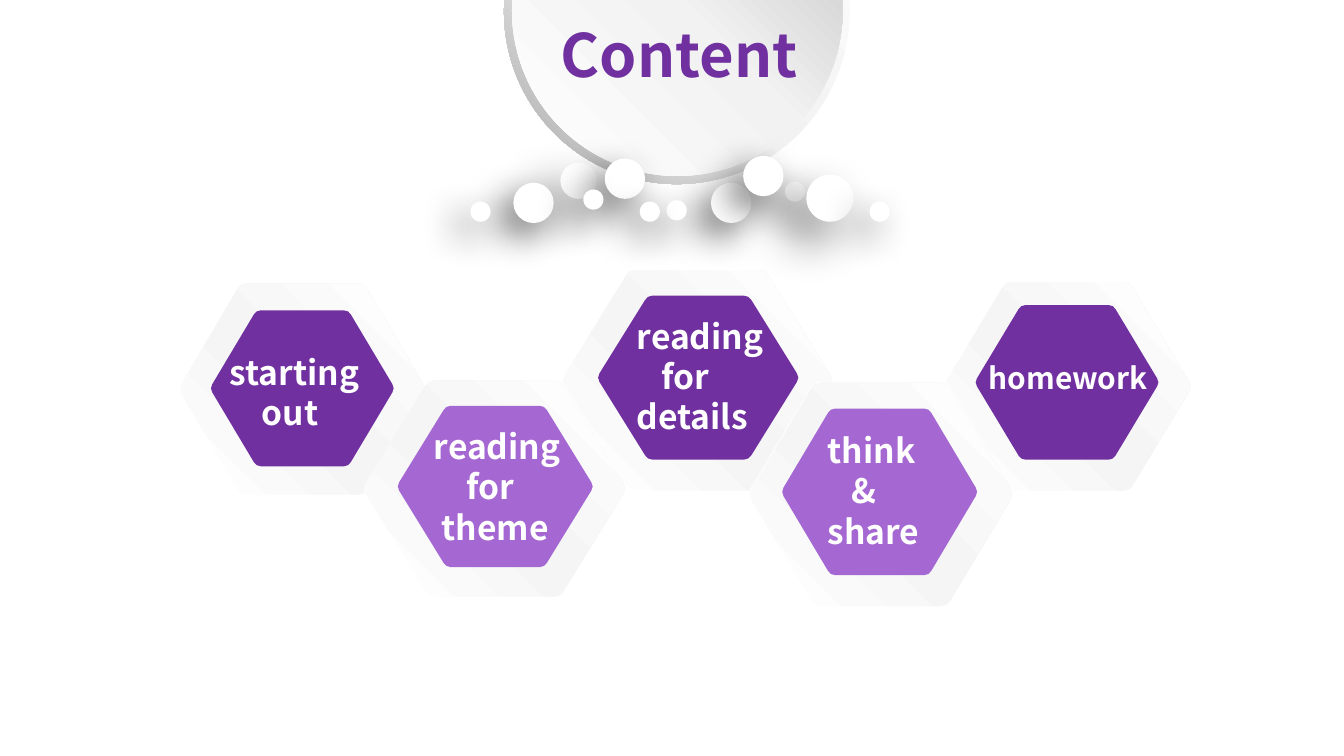
from dataclasses import dataclass

from lxml import etree
from pptx import Presentation
from pptx.dml.color import RGBColor
from pptx.enum.shapes import MSO_SHAPE
from pptx.enum.text import MSO_ANCHOR
from pptx.oxml.ns import qn
from pptx.shapes.autoshape import Shape
from pptx.text.text import TextFrame
from pptx.util import Inches, Pt

OVAL = MSO_SHAPE.OVAL
DONUT = MSO_SHAPE.DONUT
TOP = MSO_ANCHOR.TOP

FONT = "Noto Sans CJK SC"
BLACK = RGBColor(0x00, 0x00, 0x00)
WHITE = RGBColor(0xFF, 0xFF, 0xFF)
PALE = RGBColor(0xF5, 0xF5, 0xF5)
LIGHT = RGBColor(0xF2, 0xF2, 0xF2)
SILVER = RGBColor(0xBF, 0xBF, 0xBF)
GREY = RGBColor(0xA6, 0xA6, 0xA6)
PURPLE = RGBColor(0x70, 0x30, 0xA0)
LILAC = RGBColor(0xA5, 0x68, 0xD2)

STEP = 0.06
QUARTER = [(0.5, 0), (0.493, 0.026), (0.265, 0.474), (0.25, 0.493), (0.228, 0.5)]


@dataclass
class Box:
    left: float
    top: float
    width: float
    height: float

    def lengths(self) -> list[int]:
        return [Inches(v) for v in (self.left, self.top, self.width, self.height)]


@dataclass
class Blend:
    stops: list[tuple[int, RGBColor]]
    angle: int


@dataclass
class Ball:
    left: float
    top: float
    size: float
    alpha: int = 60
    blur: int = 20
    reach: int = 10


@dataclass
class Line:
    text: str
    indent: int = 0


@dataclass
class Topic:
    back: Box
    rim: Box
    core: Box
    color: RGBColor
    label: Box
    lines: list[Line]
    size: int = 18


RING = Blend([(0, WHITE), (55, LIGHT), (100, GREY)], 135)
DISC = Blend([(0, WHITE), (51, LIGHT), (100, SILVER)], 315)
RIM = Blend([(0, WHITE), (47, PALE), (100, WHITE)], 315)

BALLS = [
    Ball(5.29, 1.36, 0.3),
    Ball(4.96, 1.49, 0.15),
    Ball(5.84, 1.35, 0.15),
    Ball(4.17, 1.21, 0.27, 50, 25, 15),
    Ball(4.5, 1.18, 0.3),
    Ball(4.76, 1.5, 0.15),
    Ball(6, 1.3, 0.35, 50, 25, 15),
    Ball(3.82, 1.36, 0.3),
    Ball(3.5, 1.5, 0.15),
    Ball(5.53, 1.16, 0.3),
    Ball(4.34, 1.41, 0.15),
    Ball(6.47, 1.5, 0.15),
]

TOPICS = [
    Topic(Box(7.02, 2.09, 1.84, 1.56), Box(7.03, 2.1, 1.83, 1.55),
          Box(7.26, 2.27, 1.36, 1.15), PURPLE, Box(7.26, 2.63, 1.65, 0.37),
          [Line("homework")], 16),
    Topic(Box(4.19, 2, 2.02, 1.66), Box(4.19, 2.01, 2, 1.64),
          Box(4.45, 2.2, 1.49, 1.22), PURPLE, Box(4.58, 2.3, 1.69, 1.01),
          [Line("reading", 1), Line("for", 4), Line("details", 1)]),
    Topic(Box(1.33, 2.1, 1.84, 1.58), Box(1.34, 2.11, 1.82, 1.57),
          Box(1.57, 2.31, 1.36, 1.16), PURPLE, Box(1.55, 2.57, 1.41, 0.71),
          [Line("starting", 1), Line("out", 5)]),
    Topic(Box(2.71, 2.83, 1.96, 1.63), Box(2.71, 2.83, 1.94, 1.61),
          Box(2.96, 3.02, 1.45, 1.2), LILAC, Box(3.13, 3.12, 1.36, 1.01),
          [Line("reading"), Line("for", 4), Line("theme", 1)]),
    Topic(Box(5.57, 2.84, 1.97, 1.68), Box(5.58, 2.85, 1.95, 1.66),
          Box(5.82, 3.04, 1.45, 1.24), LILAC, Box(6, 3.15, 1.22, 1.01),
          [Line("think", 1), Line("&", 4), Line("share", 1)]),
]


def paint(shape: Shape, fill: RGBColor | Blend) -> None:
    shape.shadow.inherit = False
    shape.line.fill.background()
    if isinstance(fill, RGBColor):
        shape.fill.solid()
        shape.fill.fore_color.rgb = fill
        return
    shape.fill.gradient()
    grad = shape._element.spPr.find(qn("a:gradFill"))
    stops = grad.find(qn("a:gsLst"))
    for old in list(stops):
        stops.remove(old)
    for spot, color in fill.stops:
        stop = etree.SubElement(stops, qn("a:gs"), pos=str(spot * 1000))
        etree.SubElement(stop, qn("a:srgbClr"), val=str(color))
    grad.find(qn("a:lin")).set("ang", str(fill.angle * 60000))


def draw_oval(shapes, box: Box, fill: RGBColor | Blend, kind=OVAL) -> Shape:
    shape = shapes.add_shape(kind, *box.lengths())
    paint(shape, fill)
    return shape


def draw_ball(shapes, ball: Ball) -> None:
    box = Box(ball.left, ball.top, ball.size, ball.size)
    shape = draw_oval(shapes, box, WHITE)
    effects = shape._element.spPr.find(qn("a:effectLst"))
    shadow = etree.SubElement(
        effects, qn("a:outerShdw"), blurRad=str(Pt(ball.blur)),
        dist=str(Pt(ball.reach)), dir=str(135 * 60000), rotWithShape="0")
    color = etree.SubElement(shadow, qn("a:srgbClr"), val=str(BLACK))
    etree.SubElement(color, qn("a:alpha"), val=str(ball.alpha * 1000))


def draw_hex(shapes, box: Box, fill: RGBColor | Blend) -> None:
    half = QUARTER + [(-x, y) for x, y in reversed(QUARTER)]
    ring = half + [(-x, -y) for x, y in half[1:-1]]
    points = [(Inches(box.left + box.width * (0.5 + x)),
               Inches(box.top + box.height * (0.5 + y))) for x, y in ring]
    path = shapes.build_freeform(*points[0])
    path.add_line_segments(points[1:], close=True)
    paint(path.convert_to_shape(), fill)


def set_text(frame: TextFrame, lines: list[Line], size: int, color: RGBColor) -> None:
    frame.word_wrap = True
    frame.vertical_anchor = TOP
    frame.text = "\n".join(line.text for line in lines)
    for para, line in zip(frame.paragraphs, lines):
        props = para._p.get_or_add_pPr()
        props.set("marL", str(Inches(line.indent * STEP)))
        props.set("algn", "l")
        para.line_spacing = Pt(round(size * 1.2, 1))
        for run in para.runs:
            run.font.name = FONT
            run.font.size = Pt(size)
            run.font.bold = True
            run.font.color.rgb = color


def draw_topic(shapes, topic: Topic) -> None:
    draw_hex(shapes, topic.back, WHITE)
    draw_hex(shapes, topic.rim, RIM)
    draw_hex(shapes, topic.core, topic.color)
    label = shapes.add_textbox(*topic.label.lengths())
    set_text(label.text_frame, topic.lines, topic.size, WHITE)


def main() -> None:
    deck = Presentation()
    deck.slide_width = Inches(10)
    deck.slide_height = deck.slide_width * 9 // 16
    shapes = deck.slides.add_slide(deck.slide_layouts[5]).shapes
    ring = draw_oval(shapes, Box(3.75, -1.2, 2.57, 2.57), RING, DONUT)
    ring.adjustments[0] = 0.05
    draw_oval(shapes, Box(3.81, -1.15, 2.46, 2.46), DISC)
    for ball in BALLS:
        draw_ball(shapes, ball)
    title = shapes.title
    title.left, title.top, title.width, title.height = Box(4.07, 0.08, 3.03, 0.64).lengths()
    set_text(title.text_frame, [Line("Content")], 32, PURPLE)
    shapes._spTree.append(title._element)
    for topic in TOPICS:
        draw_topic(shapes, topic)
    deck.save("out.pptx")


if __name__ == "__main__":
    main()
